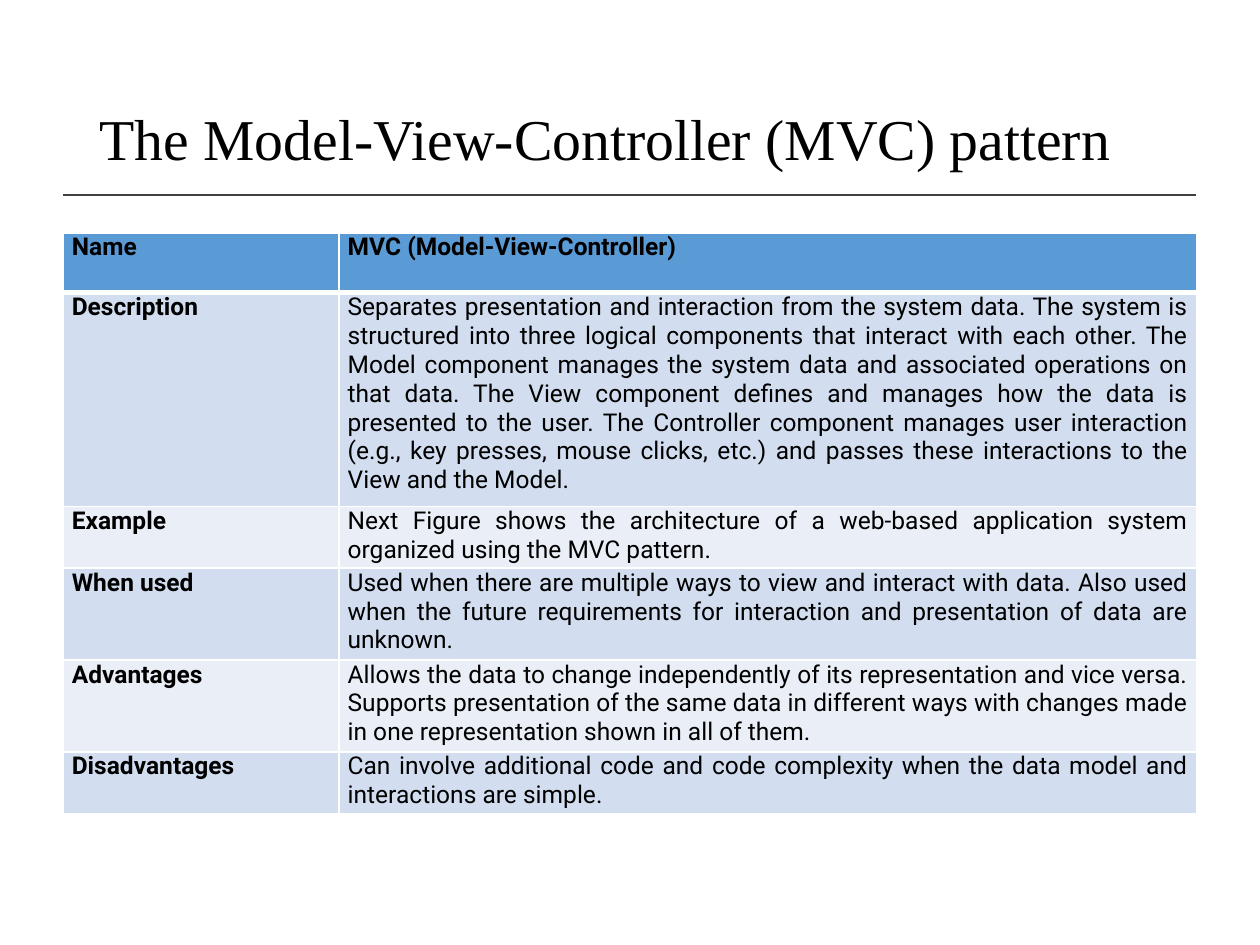
from dataclasses import dataclass

from lxml.etree import SubElement
from pptx import Presentation
from pptx.dml.color import RGBColor
from pptx.enum.shapes import MSO_CONNECTOR
from pptx.enum.text import MSO_ANCHOR, PP_ALIGN
from pptx.oxml import parse_xml
from pptx.oxml.ns import nsdecls, qn
from pptx.util import Inches, Pt


@dataclass(frozen=True)
class Theme:
    text: str = "000000"
    rule: str = "404040"
    border: str = "FFFFFF"
    header: str = "5B9BD5"
    bands: tuple = ("EAEFF7", "D2DEEF")
    title_font: str = "Times New Roman"
    body_font: str = "Roboto"
    title_size: float = 33
    body_size: float = 14
    thin: float = 1
    thick: float = 3


class SlideBuilder:
    COLUMNS, ROWS = 100, 75

    def __init__(self, presentation, theme):
        self.theme = theme
        self.column = presentation.slide_width / self.COLUMNS
        self.row = presentation.slide_height / self.ROWS
        self.slide = presentation.slides.add_slide(presentation.slide_layouts[6])

    def across(self, columns):
        return round(columns * self.column)

    def down(self, rows):
        return round(rows * self.row)

    def box(self, left, top, width, height):
        return self.across(left), self.down(top), self.across(width), self.down(height)

    def style(self, paragraph, font, size, bold=False):
        paragraph.font.name = font
        paragraph.font.size = Pt(size)
        paragraph.font.bold = bold
        paragraph.font.color.rgb = RGBColor.from_string(self.theme.text)

    def title(self, text, *area):
        frame = self.slide.shapes.add_textbox(*self.box(*area)).text_frame
        frame.word_wrap = True
        frame.vertical_anchor = MSO_ANCHOR.MIDDLE
        paragraph = frame.paragraphs[0]
        paragraph.text = text
        paragraph.line_spacing = 0.9
        self.style(paragraph, self.theme.title_font, self.theme.title_size)

    def rule(self, left, right, top):
        connector = self.slide.shapes.add_connector(
            MSO_CONNECTOR.STRAIGHT,
            self.across(left), self.down(top), self.across(right), self.down(top),
        )
        connector.line.color.rgb = RGBColor.from_string(self.theme.rule)
        connector.line.width = Pt(self.theme.thin)
        SubElement(connector._element.spPr, qn("a:effectLst"))

    def table(self, entries, left, top, widths, heights):
        area = self.box(left, top, sum(widths), sum(heights))
        table = self.slide.shapes.add_table(len(entries), len(widths), *area).table
        for column, width in zip(table.columns, widths):
            column.width = self.across(width)
        for index, (row, height, texts) in enumerate(zip(table.rows, heights, entries)):
            row.height = self.down(height)
            for position, (cell, text) in enumerate(zip(row.cells, texts)):
                is_header = index == 0
                fill = self.theme.header if is_header else self.theme.bands[index % 2]
                self.cell(cell, text, fill, is_header or position == 0)
                self.borders(cell, index)

    def cell(self, cell, text, fill, bold):
        cell.margin_left = cell.margin_right = Inches(0.07)
        cell.margin_top = cell.margin_bottom = 0
        cell.fill.solid()
        cell.fill.fore_color.rgb = RGBColor.from_string(fill)
        paragraph = cell.text_frame.paragraphs[0]
        paragraph.text = text
        paragraph.alignment = PP_ALIGN.JUSTIFY
        self.style(paragraph, self.theme.body_font, self.theme.body_size, bold)

    def borders(self, cell, index):
        thin, thick = self.theme.thin, self.theme.thick
        widths = {
            "lnL": thin,
            "lnR": thin,
            "lnT": thick if index == 1 else thin,
            "lnB": thick if index == 0 else thin,
        }
        properties = cell._tc.get_or_add_tcPr()
        for place, (side, width) in enumerate(widths.items()):
            properties.insert(place, parse_xml(
                f'<a:{side} {nsdecls("a")} w="{Pt(width)}"><a:solidFill>'
                f'<a:srgbClr val="{self.theme.border}"/></a:solidFill></a:{side}>'
            ))


PATTERN = [
    ("Name", "MVC (Model-View-Controller)"),
    ("Description",
     "Separates presentation and interaction from the system data. The system is "
     "structured into three logical components that interact with each other. The "
     "Model component manages the system data and associated operations on that data. "
     "The View component defines and manages how the data is presented to the user. "
     "The Controller component manages user interaction (e.g., key presses, mouse "
     "clicks, etc.) and passes these interactions to the View and the Model."),
    ("Example",
     "Next Figure shows the architecture of a web-based application system organized "
     "using the MVC pattern."),
    ("When used",
     "Used when there are multiple ways to view and interact with data. Also used when "
     "the future requirements for interaction and presentation of data are unknown."),
    ("Advantages",
     "Allows the data to change independently of its representation and vice versa. "
     "Supports presentation of the same data in different ways with changes made in "
     "one representation shown in all of them."),
    ("Disadvantages",
     "Can involve additional code and code complexity when the data model and "
     "interactions are simple."),
]


def main():
    presentation = Presentation()
    presentation.slide_width = Inches(10)
    presentation.slide_height = Inches(7.5)
    builder = SlideBuilder(presentation, Theme())
    builder.rule(5, 94.9, 15.5)
    builder.title("The Model-View-Controller (MVC) pattern", 6.9, 4, 86.2, 14.5)
    builder.table(PATTERN, 5, 18.5, (21.9, 68.1), (4.7, 17, 4.9, 7.3, 7.3, 4.9))
    presentation.save("out.pptx")


if __name__ == "__main__":
    main()
